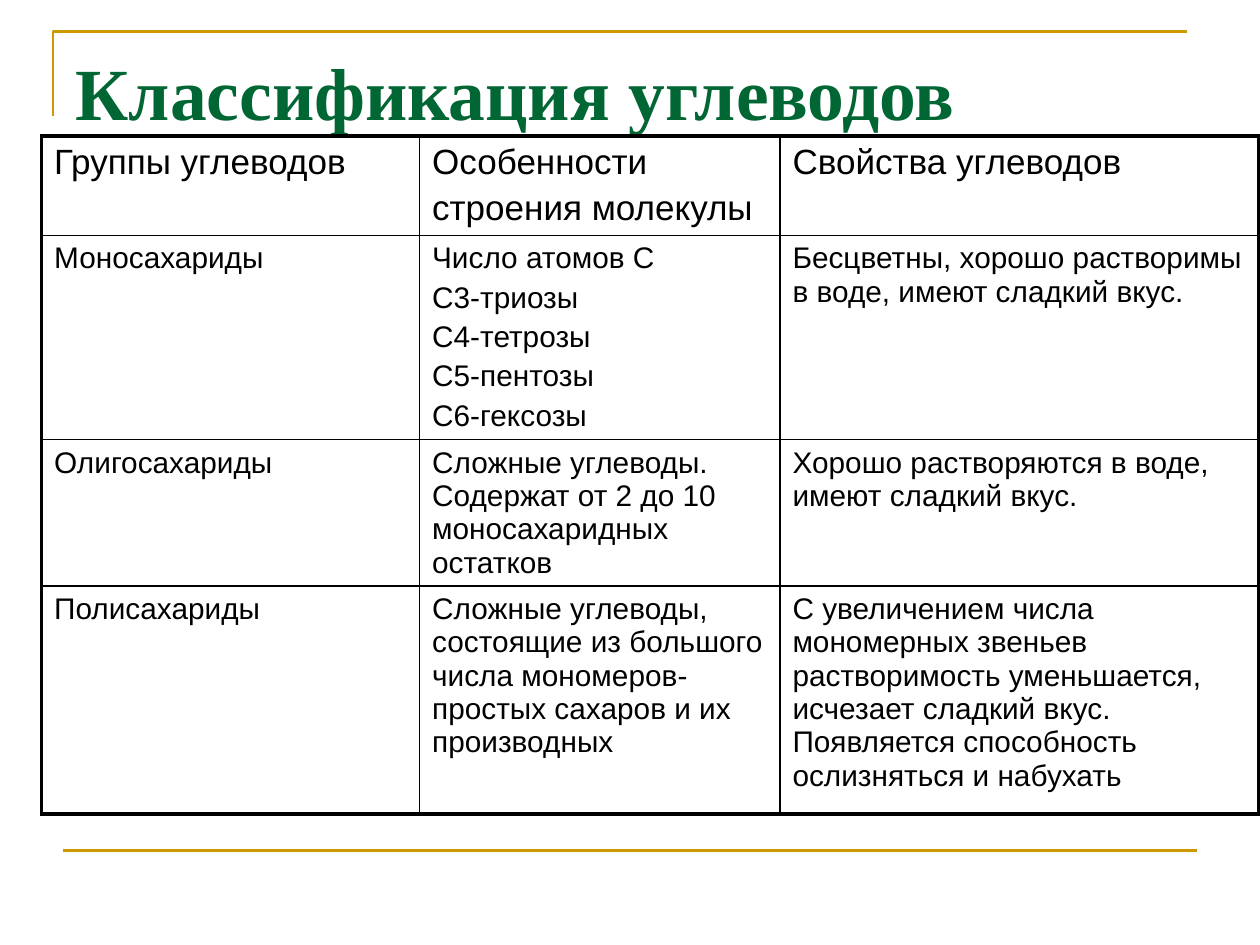
"""Build a slide that sorts carbohydrates into groups in a ruled table."""
from dataclasses import dataclass

from lxml import etree
from pptx import Presentation
from pptx.dml.color import RGBColor
from pptx.enum.shapes import MSO_CONNECTOR
from pptx.enum.text import MSO_ANCHOR, MSO_AUTO_SIZE, PP_ALIGN
from pptx.oxml.ns import qn
from pptx.util import Emu, Inches, Pt

GOLD = RGBColor(0xCC, 0x99, 0x00)
GREEN = RGBColor(0x00, 0x66, 0x33)
BLACK = RGBColor(0x00, 0x00, 0x00)
STRAIGHT = MSO_CONNECTOR.STRAIGHT
TOP = MSO_ANCHOR.TOP
LEFT = PP_ALIGN.LEFT
FIXED = MSO_AUTO_SIZE.NONE

WIDE, HIGH = Inches(10), Inches(7.5)
THIN, THICK = 1, 2.25
COLS = (3, 2.86, 3.8)


@dataclass(frozen=True)
class Row:
    """One table row: height in inches, text size and lines of each cell."""
    high: float
    size: int
    cells: tuple[tuple[str, ...], ...]


ROWS = (
    Row(0.79, 20, (
        ("Группы углеводов",),
        ("Особенности", "строения молекулы"),
        ("Свойства углеводов",))),
    Row(1.62, 17, (
        ("Моносахариды",),
        ("Число атомов С", "С3-триозы", "С4-тетрозы", "С5-пентозы", "С6-гексозы"),
        ("Бесцветны, хорошо растворимы в воде, имеют сладкий вкус.",))),
    Row(1.16, 17, (
        ("Олигосахариды",),
        ("Сложные углеводы. Содержат от 2 до 10 моносахаридных остатков",),
        ("Хорошо растворяются в воде, имеют сладкий вкус.",))),
    Row(1.81, 17, (
        ("Полисахариды",),
        ("Сложные углеводы, состоящие из большого числа мономеров-простых "
         "сахаров и их производных",),
        ("С увеличением числа мономерных звеньев растворимость уменьшается, "
         "исчезает сладкий вкус. Появляется способность ослизняться и набухать",))),
)


def spot(x: float, y: float) -> tuple[Emu, Emu]:
    """Turn shares of the slide's size into a point."""
    return Emu(round(WIDE * x)), Emu(round(HIGH * y))


def write(para, text: str, font: str, size: float, color: RGBColor, bold: bool = False) -> None:
    """Add one formatted run to a paragraph."""
    para.alignment = LEFT
    run = para.add_run()
    run.text = text
    run.font.name = font
    run.font.size = Pt(size)
    run.font.bold = bold
    run.font.color.rgb = color


def rule(line) -> None:
    """Give a line the gold rule style."""
    line.color.rgb = GOLD
    line.width = Pt(1.5)


def frame(slide) -> None:
    """Draw the corner above the title and the rule at the foot."""
    path = slide.shapes.build_freeform(*spot(0.042, 0.123))
    path.add_line_segments([spot(0.042, 0.033), spot(0.942, 0.033)], close=False)
    corner = path.convert_to_shape()
    corner.shadow.inherit = False
    corner.fill.background()
    rule(corner.line)
    foot = slide.shapes.add_connector(STRAIGHT, *spot(0.05, 0.9), *spot(0.95, 0.9))
    rule(foot.line)
    etree.SubElement(foot.element.spPr, qn("a:effectLst"))


def head(slide) -> None:
    """Place and fill the title."""
    title = slide.shapes.title
    title.left, title.top = Inches(0.5), Inches(0.25)
    title.width, title.height = Inches(8.5), Inches(0.75)
    body = title.text_frame
    body.auto_size = FIXED
    body.vertical_anchor = TOP
    body.margin_top = Inches(0.12)
    write(body.paragraphs[0], "Классификация углеводов", "Times New Roman", 42, GREEN, True)


def edge(cell, side: str, width: float) -> None:
    """Draw one solid border of a cell."""
    props = cell._tc.get_or_add_tcPr()
    line = etree.SubElement(props, qn(f"a:ln{side}"), w=str(Pt(width)))
    fill = etree.SubElement(line, qn("a:solidFill"))
    etree.SubElement(fill, qn("a:srgbClr"), val=str(BLACK))


def grid(slide) -> None:
    """Build the table with thick outer and thin inner borders."""
    last, end = len(ROWS) - 1, len(COLS) - 1
    table = slide.shapes.add_table(
        len(ROWS), len(COLS), Inches(0.33), Inches(1.08),
        Inches(sum(COLS)), Inches(sum(row.high for row in ROWS))).table
    table.first_row = table.horz_banding = False
    for col, wide in zip(table.columns, COLS):
        col.width = Inches(wide)
    for r, row in enumerate(ROWS):
        table.rows[r].height = Inches(row.high)
        for c, lines in enumerate(row.cells):
            cell = table.cell(r, c)
            outer = {"L": c == 0, "R": c == end, "T": r == 0, "B": r == last}
            for side, thick in outer.items():
                edge(cell, side, THICK if thick else THIN)
            cell.fill.background()
            body = cell.text_frame
            for i, text in enumerate(lines):
                para = body.add_paragraph() if i else body.paragraphs[0]
                para.space_before = Pt(row.size * 0.2)
                write(para, text, "Arial", row.size, BLACK)


def main() -> None:
    """Make the slide and save it."""
    deck = Presentation()
    deck.slide_width, deck.slide_height = WIDE, HIGH
    slide = deck.slides.add_slide(deck.slide_layouts[5])
    frame(slide)
    head(slide)
    grid(slide)
    deck.save("out.pptx")


if __name__ == "__main__":
    main()
